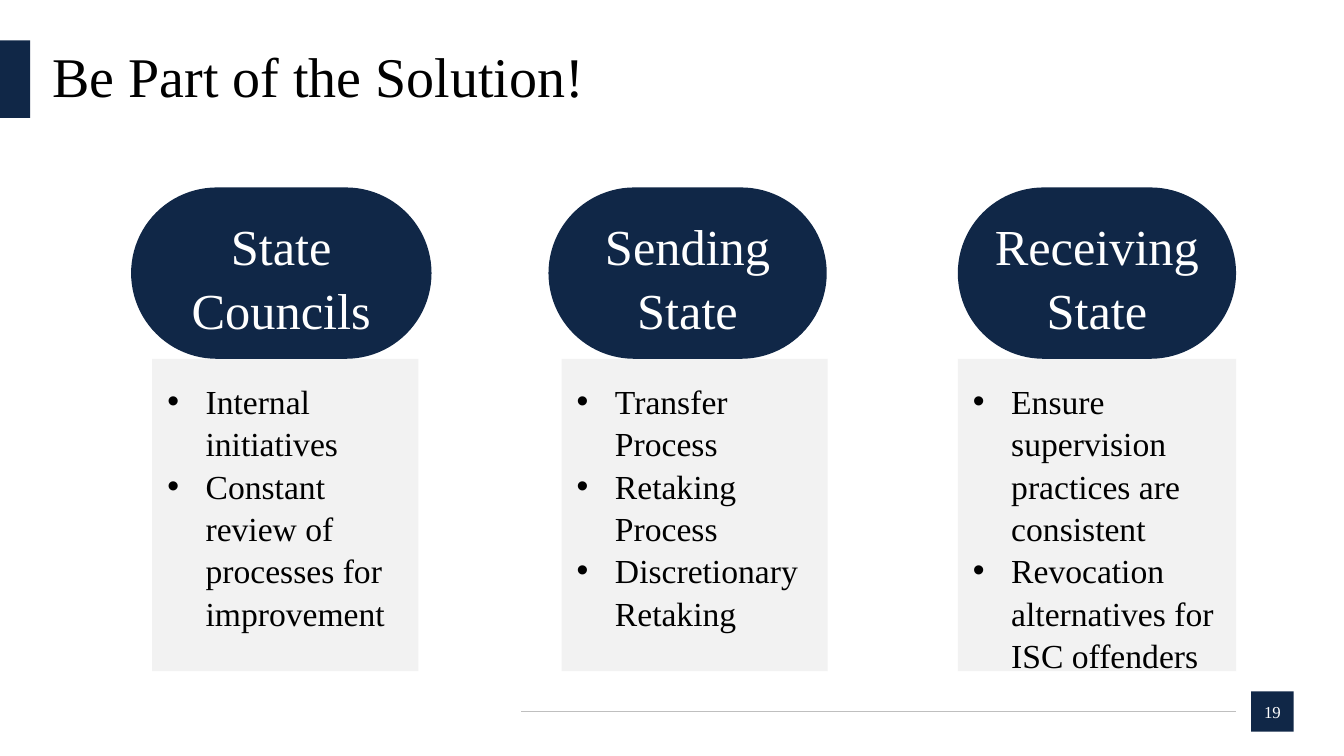
from lxml import etree
from pptx import Presentation
from pptx.dml.color import RGBColor
from pptx.enum.shapes import MSO_CONNECTOR, MSO_SHAPE
from pptx.enum.text import MSO_ANCHOR, MSO_AUTO_SIZE, PP_ALIGN
from pptx.oxml.ns import qn
from pptx.util import Inches, Pt

RECT, PILL = MSO_SHAPE.RECTANGLE, MSO_SHAPE.ROUNDED_RECTANGLE
STRAIGHT = MSO_CONNECTOR.STRAIGHT
TOP, MIDDLE = MSO_ANCHOR.TOP, MSO_ANCHOR.MIDDLE
LEFT, CENTER = PP_ALIGN.LEFT, PP_ALIGN.CENTER
NO_FIT, GROW = MSO_AUTO_SIZE.NONE, MSO_AUTO_SIZE.SHAPE_TO_FIT_TEXT

FONT = "Times New Roman"
NAVY, PALE, GREY, BLACK, WHITE = "102747", "F2F2F2", "BFBFBF", "000000", "FFFFFF"

HEADING_TOP, HEADING_HEIGHT = 1.86, 1.7
PANEL_TOP, PANEL_HEIGHT = HEADING_TOP + HEADING_HEIGHT, 3.1
BULLET_INDENT = 0.38

COLUMNS = [
    ("State Councils", (1.3, 2.98), (1.51, 2.64),
     ["Internal initiatives",
      "Constant review of processes for improvement"]),
    ("Sending State", (5.44, 2.76), (5.57, 2.64),
     ["Transfer Process", "Retaking Process", "Discretionary Retaking"]),
    ("Receiving State", (9.5, 2.76), (9.5, 2.76),
     ["Ensure supervision practices are consistent",
      "Revocation alternatives for ISC offenders"]),
]


def color(hex_code):
    """Return the colour for a hex string."""
    return RGBColor.from_string(hex_code)


def add_bullet(paragraph):
    """Give a paragraph a round bullet with a hanging indent."""
    properties = paragraph._p.get_or_add_pPr()
    properties.set("marL", str(Inches(BULLET_INDENT)))
    properties.set("indent", str(-Inches(BULLET_INDENT)))
    etree.SubElement(properties, qn("a:buFont")).set("typeface", "Arial")
    etree.SubElement(properties, qn("a:buChar")).set("char", "•")


def write_text(shape, *lines, size, ink=BLACK, align=LEFT, anchor=TOP,
               insets=(0, 0, 0, 0), spacing=1.05, fit=NO_FIT, bullets=False):
    """Fill a shape with one formatted paragraph per line of text."""
    frame = shape.text_frame
    frame.text = "\n".join(lines)
    frame.word_wrap = True
    frame.auto_size = fit
    frame.vertical_anchor = anchor
    (frame.margin_left, frame.margin_top,
     frame.margin_right, frame.margin_bottom) = map(Inches, insets)
    for paragraph in frame.paragraphs:
        paragraph.alignment = align
        paragraph.line_spacing = spacing
        font = paragraph.runs[0].font
        font.name, font.size = FONT, Pt(size)
        font.color.rgb = color(ink)
        if bullets:
            add_bullet(paragraph)


def add_block(slide, kind, left, top, width, height, fill):
    """Add a flat filled shape without outline or shadow."""
    block = slide.shapes.add_shape(
        kind, *map(Inches, (left, top, width, height)))
    block.shadow.inherit = False
    block.fill.solid()
    block.fill.fore_color.rgb = color(fill)
    block.line.fill.background()
    return block


def add_title(slide, text):
    """Place the title and the accent bar at its left."""
    title = slide.shapes.title
    title.left, title.top = Inches(0.52), Inches(0.4)
    title.width, title.height = Inches(12.31), Inches(0.77)
    write_text(title, text, size=40, anchor=MIDDLE, spacing=0.9)
    add_block(slide, RECT, 0, 0.4, 0.3, 0.77, NAVY)


def add_footer(slide, number):
    """Add the page number box and the rule beside it."""
    page_box = add_block(slide, RECT, 12.41, 6.86, 0.42, 0.4, NAVY)
    write_text(page_box, number, size=12, ink=WHITE, align=CENTER,
               anchor=MIDDLE, spacing=1.0)
    rule = slide.shapes.add_connector(
        STRAIGHT, Inches(5.17), Inches(7.06), Inches(12.26), Inches(7.06))
    rule.line.color.rgb = color(GREY)
    rule.line.width = Pt(0.5)
    etree.SubElement(rule._element.spPr, qn("a:effectLst"))


def add_column(slide, heading, heading_span, panel_span, points):
    """Add a rounded heading above a panel of bullet points."""
    left, width = panel_span
    panel = add_block(slide, RECT, left, PANEL_TOP, width, PANEL_HEIGHT, PALE)
    write_text(panel, *points, size=24, insets=(0.15, 0.2, 0.15, 0.1),
               bullets=True)
    left, width = heading_span
    pill = add_block(slide, PILL, left, HEADING_TOP, width, HEADING_HEIGHT, NAVY)
    pill.adjustments[0] = 0.5
    write_text(pill, heading, size=36, ink=WHITE, align=CENTER, fit=GROW)


def main():
    """Build the slide and save it."""
    deck = Presentation()
    deck.slide_width, deck.slide_height = Inches(13.33), Inches(7.5)
    slide = deck.slides.add_slide(deck.slide_layouts[5])
    add_title(slide, "Be Part of the Solution!")
    add_footer(slide, "19")
    for column in COLUMNS:
        add_column(slide, *column)
    deck.save("out.pptx")


if __name__ == "__main__":
    main()
